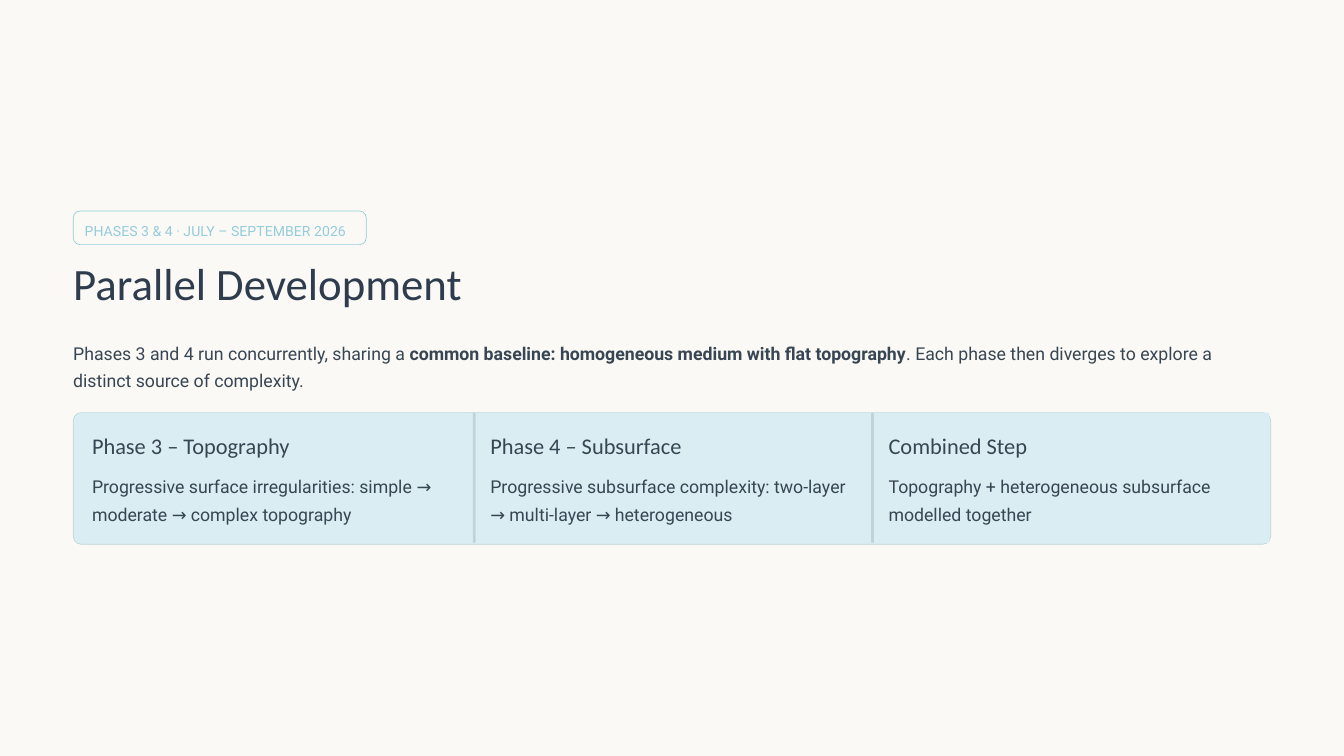
"""Build the Parallel Development slide with a three-column phase panel."""
from pptx import Presentation, util as u
from pptx.dml.color import RGBColor
from pptx.enum import shapes, text

TAG = "PHASES 3 & 4 · JULY – SEPTEMBER 2026"
TITLE = "Parallel Development"
INTRO = [
    ("Phases 3 and 4 run concurrently, sharing a ", False),
    ("common baseline: homogeneous medium with flat topography", True),
    (". Each phase then diverges to explore a distinct source of complexity.", False),
]
PHASES = [
    ("Phase 3 – Topography",
     "Progressive surface irregularities: simple → moderate → complex topography"),
    ("Phase 4 – Subsurface",
     "Progressive subsurface complexity: two-layer → multi-layer → heterogeneous"),
    ("Combined Step", "Topography + heterogeneous subsurface modelled together"),
]

PAPER, PANEL, RULE = "FAF9F5", "D9EDF2", "BFD3D8"
ACCENT, NAVY, INK = "95CCDA", "2E3C4E", "384653"
HEADING_FONT, BODY_FONT = "Calibri", "Roboto"
RECTANGLE = shapes.MSO_SHAPE.RECTANGLE
ROUNDED = shapes.MSO_SHAPE.ROUNDED_RECTANGLE

WIDTH = 10
HEIGHT = WIDTH * 9 / 16
CONTENT = 8.91
MARGIN = (WIDTH - CONTENT) / 2
PANEL_TOP, PANEL_HEIGHT = 3.07, 0.98
INSET = 0.01
COLUMN = (CONTENT - 2 * INSET) / len(PHASES)
PADDING = 0.13
DIVIDER = 0.02


def color(value):
    return RGBColor.from_string(value)


def add_box(slide, kind, box, fill=None, line=None, radius=None):
    shape = slide.shapes.add_shape(kind, *map(u.Inches, box))
    shape.shadow.inherit = False
    if fill:
        shape.fill.solid()
        shape.fill.fore_color.rgb = color(fill)
    else:
        shape.fill.background()
    if line:
        shape.line.color.rgb = color(line)
        shape.line.width = u.Pt(0.38)
    else:
        shape.line.fill.background()
    if radius is not None:
        shape.adjustments[0] = radius / min(box[2:])


def add_text(slide, box, runs, font, size, ink, spacing, wrap=False):
    frame = slide.shapes.add_textbox(*map(u.Inches, box)).text_frame
    frame.margin_left = frame.margin_right = frame.margin_top = frame.margin_bottom = 0
    frame.word_wrap = wrap
    frame.vertical_anchor = text.MSO_ANCHOR.TOP
    paragraph = frame.paragraphs[0]
    paragraph.alignment = text.PP_ALIGN.LEFT
    paragraph.line_spacing = u.Pt(spacing)
    for words, bold in runs:
        run = paragraph.add_run()
        run.text = words
        run.font.name = font
        run.font.size = u.Pt(size)
        run.font.bold = bold
        run.font.color.rgb = color(ink)


def add_body(slide, box, runs):
    add_text(slide, box, runs, BODY_FONT, 9.5, INK, 14.5, wrap=True)


def add_phase(slide, index, heading, body):
    left = MARGIN + INSET + index * COLUMN
    height = PANEL_HEIGHT - INSET
    cell = (left, PANEL_TOP, COLUMN, height)
    if index:
        add_box(slide, RECTANGLE, cell, PANEL)
        add_box(slide, ROUNDED, (left, PANEL_TOP, DIVIDER, height), RULE,
                radius=DIVIDER / 2)
    else:
        add_box(slide, ROUNDED, cell, PANEL, radius=0.06)
    inner, width = left + PADDING, COLUMN - 2 * PADDING
    add_text(slide, (inner, 3.21, width, 0.21), [(heading, False)],
             HEADING_FONT, 12, INK, 15)
    add_body(slide, (inner, 3.5, width, 0.41), [(body, False)])


def main():
    presentation = Presentation()
    presentation.slide_width = u.Inches(WIDTH)
    presentation.slide_height = u.Inches(HEIGHT)
    slide = presentation.slides.add_slide(presentation.slide_layouts[6])
    slide.background.fill.solid()
    slide.background.fill.fore_color.rgb = color(PAPER)

    add_box(slide, ROUNDED, (MARGIN, 1.57, 2.18, 0.25), line=ACCENT, radius=0.05)
    add_text(slide, (0.63, 1.62, 2.01, 0.16), [(TAG, False)],
             BODY_FONT, 7.5, ACCENT, 11.5)
    add_text(slide, (MARGIN, 1.88, 3.39, 0.42), [(TITLE, False)],
             HEADING_FONT, 24, NAVY, 30.5)
    add_body(slide, (MARGIN, 2.51, CONTENT, 0.41), INTRO)

    add_box(slide, ROUNDED, (MARGIN, PANEL_TOP, CONTENT, PANEL_HEIGHT),
            PANEL, RULE, radius=0.06)
    for index, (heading, body) in enumerate(PHASES):
        add_phase(slide, index, heading, body)
    presentation.save("out.pptx")


if __name__ == "__main__":
    main()
